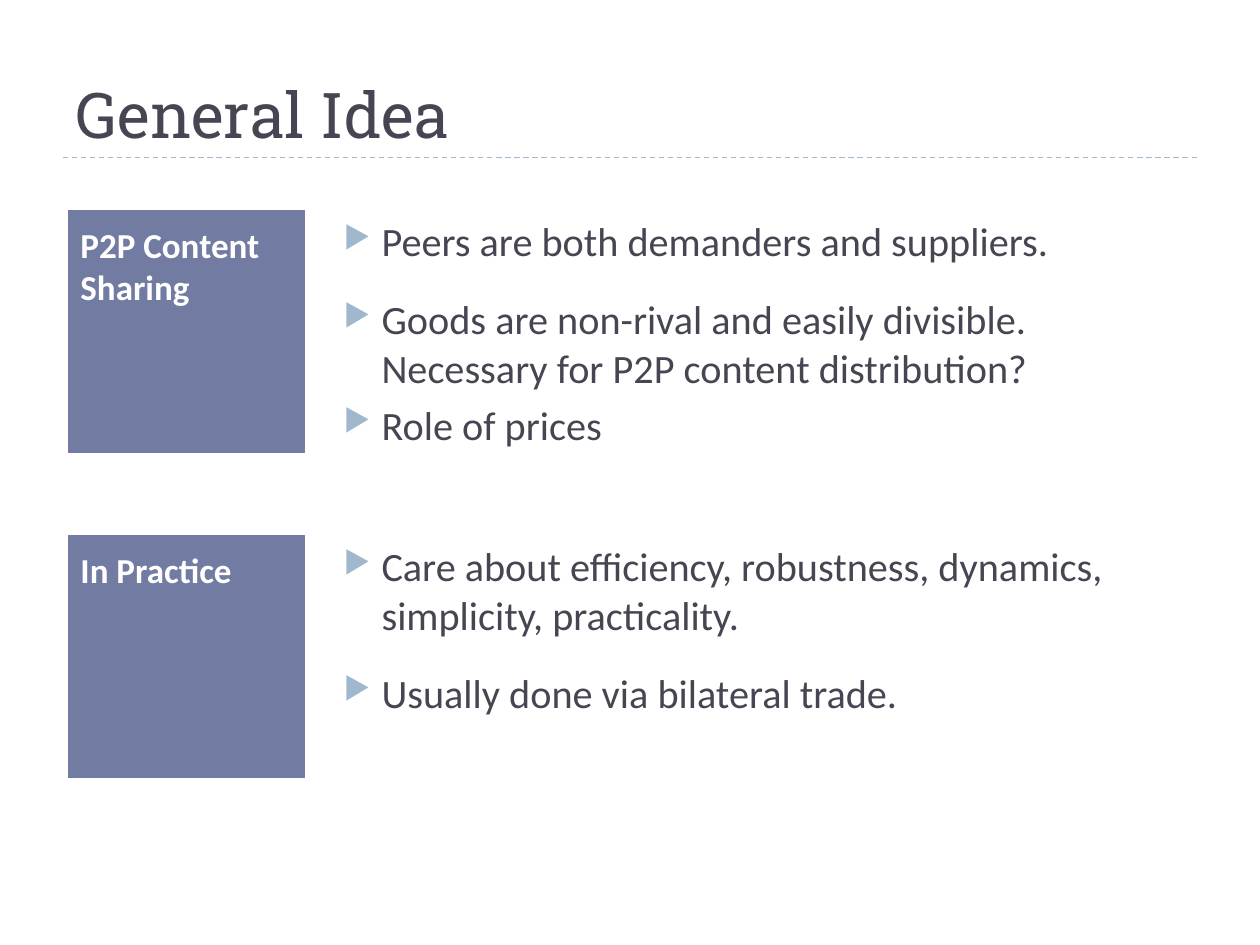
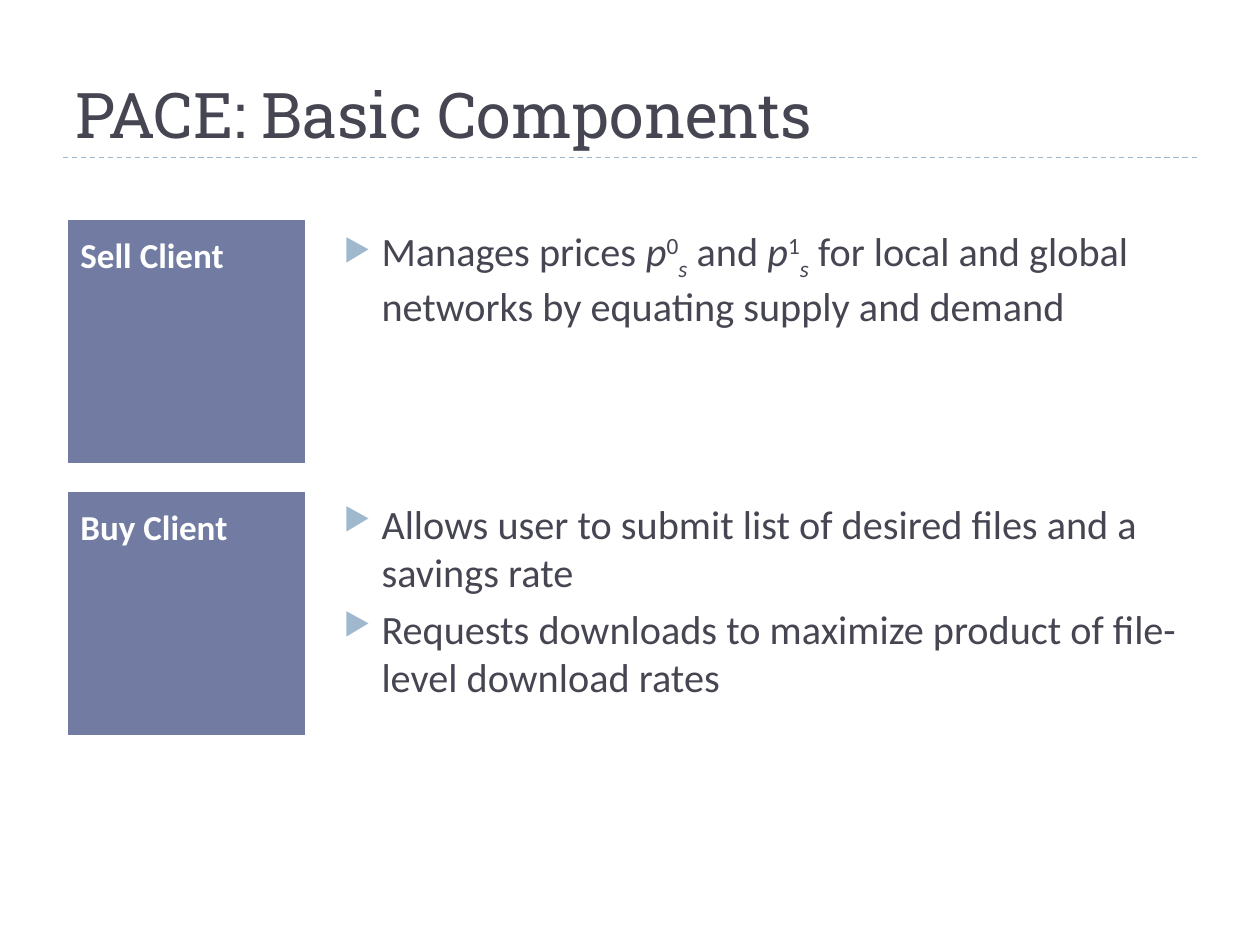
from lxml import etree
from pptx import Presentation, util as u
from pptx.dml.color import RGBColor
from pptx.enum import dml, shapes, text
from pptx.oxml import ns

WIDTH, HEIGHT = 10, 7.5
MARGIN = 0.5
INK, ACCENT, PANEL, PAPER = "464653", "9FB8CD", "727CA3", "FFFFFF"
TITLE = {"name": "Roboto Slab", "size": u.Pt(36), "bold": False}
LABEL = {"name": "Calibri", "size": u.Pt(20), "bold": True}
BODY = {"name": "Calibri", "size": u.Pt(23), "bold": False}
LABEL_LEFT, LABEL_WIDTH, LABEL_HEIGHT = 0.54, 1.88, 1.92
BODY_LEFT, WIDE, NARROW = 2.33, 7.17, 6.83
GAP, WIDE_GAP = 5, 17
BASELINES = {"sup": "30000", "sub": "-25000"}

PRICES = [
    ("Manages prices ", ""), ("p", "italic"), ("0", "sup"), ("s", "italic sub"),
    (" and ", ""), ("p", "italic"), ("1", "sup"), ("s", "italic sub"),
    (" for local and global networks by equating supply and demand", ""),
]

SLIDES = [
    ("General Idea", [
        ("P2P Content Sharing", 1.67, WIDE, 1.92, [
            (GAP, [("Peers are both demanders and suppliers.", "")]),
            (WIDE_GAP, [("Goods are non-rival and easily divisible. "
                         "Necessary for P2P content distribution?", "")]),
            (GAP, [("Role of prices", "")]),
        ]),
        ("In Practice", 4.25, NARROW, 1.5, [
            (GAP, [("Care about efficiency, robustness, dynamics, "
                    "simplicity, practicality.", "")]),
            (WIDE_GAP, [("Usually done via bilateral trade.", "")]),
        ]),
    ]),
    ("PACE: Basic Components", [
        ("Sell Client", 1.75, NARROW, 0.88, [(GAP, PRICES)]),
        ("Buy Client", 3.91, WIDE, 1.58, [
            (GAP, [("Allows user to submit list of desired files and a savings rate", "")]),
            (GAP, [("Requests downloads to maximize product of "
                    "file-level download rates", "")]),
        ]),
    ]),
]


def inches(*lengths):
    """Turn lengths in inches into slide units."""
    return [u.Inches(length) for length in lengths]


def color(value):
    """Turn a hex string into a colour."""
    return RGBColor.from_string(value)


def assign(target, values):
    """Set every attribute named in a dict."""
    for name, value in values.items():
        setattr(target, name, value)


def add_span(para, words, style, ink, marks=""):
    """Add a run, in italics or off the baseline where marked."""
    span = para.add_run()
    span.text = words
    assign(span.font, {**style, "italic": "italic" in marks})
    span.font.color.rgb = color(ink)
    for mark in marks.split():
        if mark in BASELINES:
            span._r.get_or_add_rPr().set("baseline", BASELINES[mark])


def add_bullet(para):
    """Give a paragraph a hanging triangle bullet."""
    props = para._p.get_or_add_pPr()
    props.set("marL", str(u.Inches(0.6)))
    props.set("indent", str(u.Inches(-0.3)))
    tint = etree.SubElement(props, ns.qn("a:buClr"))
    etree.SubElement(tint, ns.qn("a:srgbClr"), val=ACCENT)
    etree.SubElement(props, ns.qn("a:buSzPct"), val="76000")
    etree.SubElement(props, ns.qn("a:buChar"), char="▶")


def add_title(page, title):
    """Place the title above a dashed rule."""
    width, rule_top = WIDTH - 2 * MARGIN, HEIGHT / 6
    rule = page.shapes.add_connector(
        shapes.MSO_CONNECTOR.STRAIGHT,
        *inches(MARGIN, rule_top, MARGIN + width, rule_top))
    rule.line.color.rgb = color(ACCENT)
    assign(rule.line, {"width": u.Pt(0.75), "dash_style": dml.MSO_LINE.DASH})
    etree.SubElement(rule._element.spPr, ns.qn("a:effectLst"))
    box = page.shapes.add_textbox(*inches(MARGIN, 0.17, width, rule_top - 0.17))
    assign(box.text_frame, {"word_wrap": True,
                            "vertical_anchor": text.MSO_ANCHOR.BOTTOM})
    add_span(box.text_frame.paragraphs[0], title, TITLE, INK)


def add_label(page, label, top):
    """Place the filled panel that names a section."""
    box = page.shapes.add_shape(
        shapes.MSO_SHAPE.RECTANGLE,
        *inches(LABEL_LEFT, top, LABEL_WIDTH, LABEL_HEIGHT))
    box.shadow.inherit = False
    box.fill.solid()
    box.fill.fore_color.rgb = color(PANEL)
    box.line.color.rgb = color(PANEL)
    box.line.width = u.Pt(0.5)
    frame = box.text_frame
    sides = ("left", "top", "right", "bottom")
    assign(frame, {f"margin_{side}": u.Inches(0.1) for side in sides})
    assign(frame, {"word_wrap": True, "vertical_anchor": text.MSO_ANCHOR.TOP})
    para = frame.paragraphs[0]
    assign(para, {"alignment": text.PP_ALIGN.LEFT, "space_before": u.Pt(GAP)})
    add_span(para, label, LABEL, PAPER)


def add_section(page, label, top, width, height, points):
    """Place a label panel with its bulleted points beside it."""
    box = page.shapes.add_textbox(*inches(BODY_LEFT, top, width, height))
    frame = box.text_frame
    frame.word_wrap = True
    for index, (gap, spans) in enumerate(points):
        para = frame.add_paragraph() if index else frame.paragraphs[0]
        assign(para, {"level": 1, "space_before": u.Pt(gap)})
        add_bullet(para)
        for words, marks in spans:
            add_span(para, words, BODY, INK, marks)
    add_label(page, label, top)


def main():
    """Build the deck and save it."""
    deck = Presentation()
    deck.slide_width, deck.slide_height = inches(WIDTH, HEIGHT)
    for title, sections in SLIDES:
        page = deck.slides.add_slide(deck.slide_layouts[6])
        add_title(page, title)
        for section in sections:
            add_section(page, *section)
    deck.save("out.pptx")


if __name__ == "__main__":
    main()
